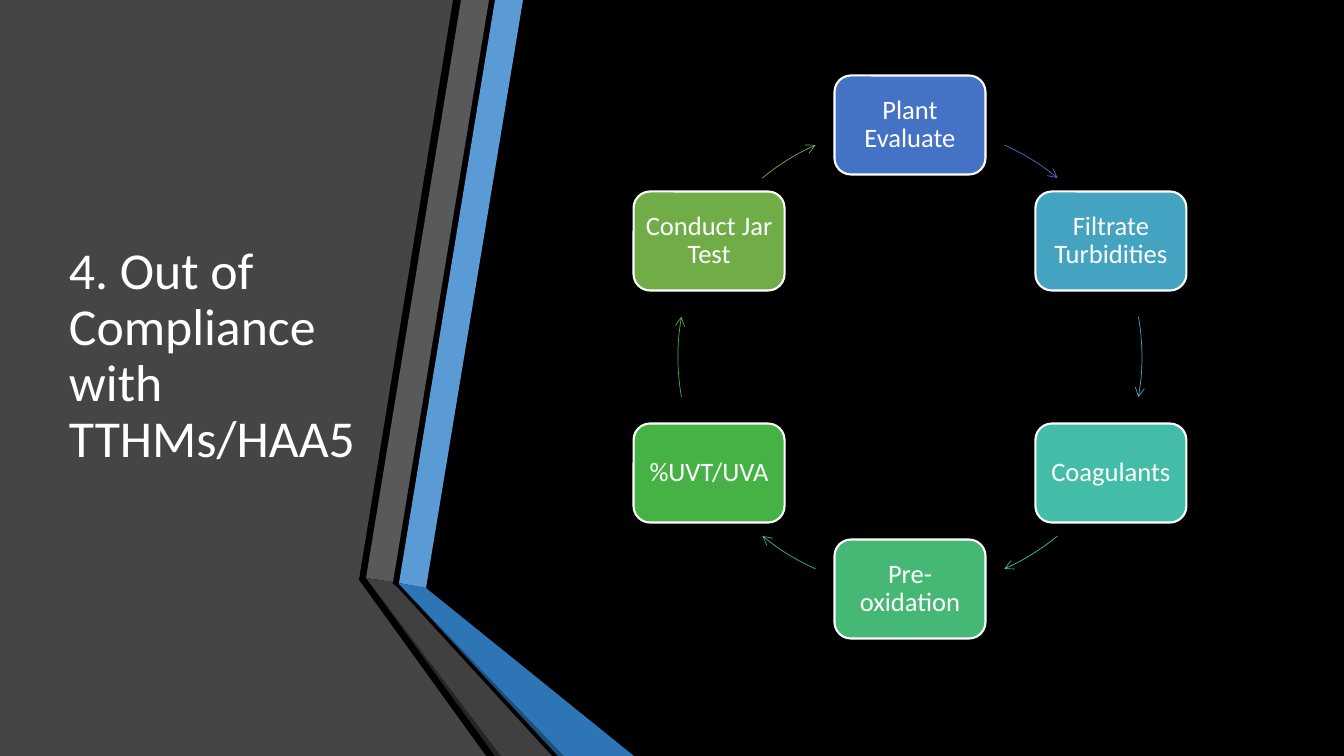
import math

from lxml import etree
from pptx import Presentation
from pptx.dml.color import RGBColor
from pptx.enum.shapes import MSO_SHAPE
from pptx.enum.text import MSO_ANCHOR, PP_ALIGN
from pptx.oxml.ns import qn
from pptx.util import Emu, Pt

ROUNDED = MSO_SHAPE.ROUNDED_RECTANGLE
ARC = MSO_SHAPE.ARC
MIDDLE = MSO_ANCHOR.MIDDLE
LEFT, CENTER = PP_ALIGN.LEFT, PP_ALIGN.CENTER

EMU_PER_PX = 914400 / 100.8
PAGE_WIDTH, PAGE_HEIGHT = 1344, 756
FONT = "Calibri"

COLORS = {
    "background": "000000",
    "text": "FFFFFF",
    "panel": "454545",
    "blue band": "5B9BD5",
    "grey band": "595959",
    "grey edge": "262626",
    "blue edge": "1F4E79",
    "blue fold": "2E75B6",
    "grey fold": "404040",
    "indigo": "4472C4",
    "sky": "44A3C0",
    "teal": "43BDA7",
    "mint": "44B874",
    "green": "46B246",
    "olive": "70AD47",
}

# Folded ribbon, from back to front: colour and corner points
RIBBON = [
    ("panel", [(0, 0), (453, 0), (359, 580), (486, 756), (0, 756)]),
    ("blue band", [(399, 583), (426, 588), (523, 0), (495, 0)]),
    ("grey band", [(489, 0), (461, 0), (366, 578), (393, 582)]),
    ("grey edge", [(366, 578), (495, 756), (501, 756)]),
    ("blue edge", [(399, 584), (558, 756), (564, 756)]),
    ("blue fold", [(399, 583), (399, 584), (564, 756), (634, 756), (426, 588)]),
    ("grey fold", [(552, 756), (398, 588), (392, 583), (393, 582),
                   (366, 578), (501, 756)]),
]

# Cycle steps, clockwise from the top: label, colour, arrow start and end angle
STEPS = [
    ("Plant Evaluate", "indigo", 294, 309.5),
    ("Filtrate Turbidities", "sky", 350, 10),
    ("Coagulants", "teal", 50.5, 66),
    ("Pre-oxidation", "mint", 114, 129.5),
    ("%UVT/UVA", "green", 170, 190),
    ("Conduct Jar Test", "olive", 230.5, 246),
]
CENTER_X, CENTER_Y, RADIUS = 910, 357, 232
STEP_WIDTH, STEP_HEIGHT = 151, 99


def px(length):
    return Emu(round(length * EMU_PER_PX))


def color(name):
    return RGBColor.from_string(COLORS[name])


def write_text(shape, text, size, align, inset):
    frame = shape.text_frame
    frame.text = text
    frame.word_wrap = True
    frame.vertical_anchor = MIDDLE
    frame.margin_left = frame.margin_right = px(inset)
    para = frame.paragraphs[0]
    para.alignment = align
    para.line_spacing = 0.9
    font = para.runs[0].font
    font.name = FONT
    font.size = Pt(size)
    font.color.rgb = color("text")


def add_polygon(page, points, fill):
    builder = page.shapes.build_freeform(*points[0], scale=EMU_PER_PX)
    builder.add_line_segments(points[1:], close=True)
    polygon = builder.convert_to_shape()
    polygon.shadow.inherit = False
    polygon.fill.solid()
    polygon.fill.fore_color.rgb = color(fill)
    polygon.line.fill.background()


def add_title(page, text):
    box = page.shapes.add_textbox(px(59), px(76), px(314), px(562))
    write_text(box, text, 37, LEFT, 10)


def add_step(page, label, fill, angle):
    middle_x = CENTER_X + RADIUS * math.cos(math.radians(angle))
    middle_y = CENTER_Y + RADIUS * math.sin(math.radians(angle))
    box = page.shapes.add_shape(
        ROUNDED, px(middle_x - STEP_WIDTH / 2), px(middle_y - STEP_HEIGHT / 2),
        px(STEP_WIDTH), px(STEP_HEIGHT))
    box.shadow.inherit = False
    box.fill.solid()
    box.fill.fore_color.rgb = color(fill)
    box.line.color.rgb = color("text")
    box.line.width = Pt(1.5)
    write_text(box, label, 19, CENTER, 6)


def add_arc_arrow(page, stroke, start, end):
    arc = page.shapes.add_shape(
        ARC, px(CENTER_X - RADIUS), px(CENTER_Y - RADIUS),
        px(2 * RADIUS), px(2 * RADIUS))
    # Adjustments count 100000ths, angles count 60000ths of a degree
    arc.adjustments[0] = start * 0.6
    arc.adjustments[1] = end * 0.6
    arc.shadow.inherit = False
    arc.fill.background()
    arc.line.color.rgb = color(stroke)
    arc.line.width = Pt(0.5)
    outline = arc.line._get_or_add_ln()
    etree.SubElement(outline, qn("a:tailEnd"), type="arrow")


def main():
    deck = Presentation()
    deck.slide_width, deck.slide_height = px(PAGE_WIDTH), px(PAGE_HEIGHT)
    page = deck.slides.add_slide(deck.slide_layouts[6])
    page.background.fill.solid()
    page.background.fill.fore_color.rgb = color("background")

    # Left panel and ribbon
    for fill, points in RIBBON:
        add_polygon(page, points, fill)
    add_title(page, "4. Out of Compliance with TTHMs/HAA5")

    # Cycle of steps
    for index, (label, fill, start, end) in enumerate(STEPS):
        add_step(page, label, fill, index * 360 / len(STEPS) - 90)
        add_arc_arrow(page, fill, start, end)

    deck.save("out.pptx")


if __name__ == "__main__":
    main()
